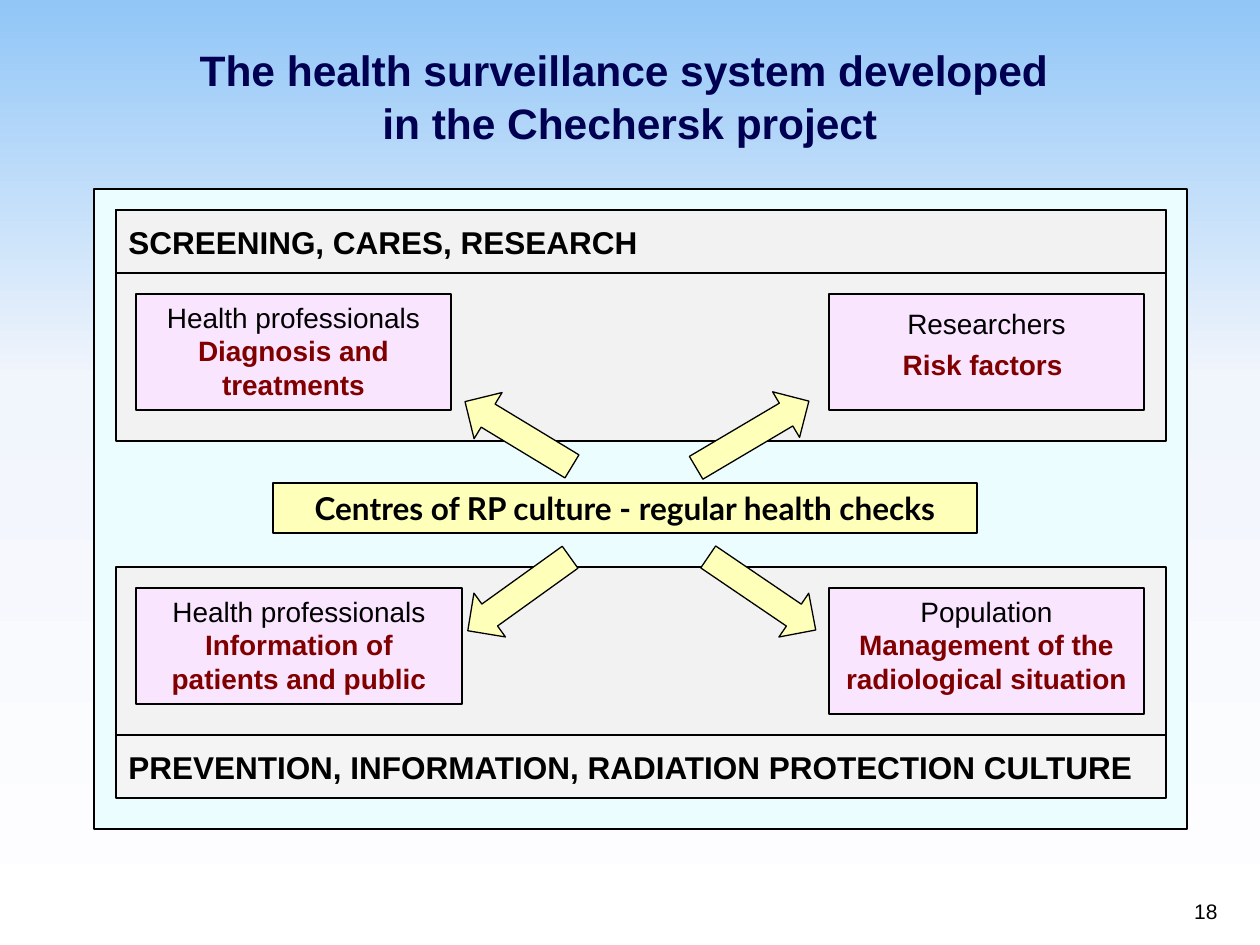
"""Build the slide on the Chechersk health surveillance system."""
from copy import deepcopy
from dataclasses import dataclass

from pptx import Presentation
from pptx.dml.color import RGBColor
from pptx.enum.shapes import MSO_SHAPE
from pptx.enum.text import MSO_ANCHOR, MSO_AUTO_SIZE, PP_ALIGN
from pptx.oxml.ns import qn
from pptx.util import Emu, Pt

RECT, LEFT_ARROW, RIGHT_ARROW = MSO_SHAPE.RECTANGLE, MSO_SHAPE.LEFT_ARROW, MSO_SHAPE.RIGHT_ARROW
TOP, MIDDLE, BOTTOM = MSO_ANCHOR.TOP, MSO_ANCHOR.MIDDLE, MSO_ANCHOR.BOTTOM
LEFT, CENTER, RIGHT = PP_ALIGN.LEFT, PP_ALIGN.CENTER, PP_ALIGN.RIGHT


@dataclass(frozen=True)
class Theme:
    font: str = "Arial"
    hub_font: str = "Lato"
    navy: str = "000053"
    black: str = "000000"
    maroon: str = "800000"
    frame: str = "EBFDFF"
    panel: str = "F2F2F2"
    footer: str = "F4F4F4"
    card: str = "FAE5FF"
    yellow: str = "FEFFB8"
    sky: tuple = ((0, "91C6F7"), (0.4, "F1F5FC"), (1, "FFFFFF"))
    title_size: float = 24.3
    heading_size: int = 18
    card_size: int = 16
    number_size: int = 12
    line_width: float = 0.75


THEME = Theme()
SLIDE = (1260, 945)
TITLE = ("The health surveillance system developed ", "in the Chechersk project")
TITLE_BOX = (0, 31, 1260, 148)
NUMBER, NUMBER_BOX = "18", (968, 867, 262, 63)
FRAME = (94, 189, 1093, 640)
PANEL_LEFT, PANEL_WIDTH, HEADING_HEIGHT = 116, 1050, 63
PANELS = [(567, 221), (210, 231)]
HEADINGS = [
    ("SCREENING, CARES, RESEARCH", 210, THEME.panel),
    ("PREVENTION, INFORMATION, RADIATION PROTECTION CULTURE", 735, THEME.footer),
]
CARDS = [
    ("Health professionals", "Diagnosis and treatments", (136, 294, 315, 116), 1),
    ("Population", "Management of the radiological situation", (829, 588, 315, 126), 1),
    ("Researchers", "Risk factors ", (829, 294, 315, 116), 1.2),
    ("Health professionals", "Information of patients and public", (136, 588, 326, 116), 1),
]
ARROWS = [
    (LEFT_ARROW, (456, 407, 125, 54), 31.2),
    (LEFT_ARROW, (456, 567, 126, 54), 324.3),
    (RIGHT_ARROW, (687, 408, 131, 53), 329.4),
    (RIGHT_ARROW, (697, 567, 130, 53), 34.2),
]
HUB, HUB_BOX = "Centres of RP culture - regular health checks", (273, 483, 704, 50)


def px(value):
    return Emu(round(value * 914400 / 126))


def add_span(para, text, size, color=THEME.black, bold=False, font=THEME.font):
    span = para.add_run()
    span.text = text
    span.font.name, span.font.size, span.font.bold = font, Pt(size), bold
    span.font.color.rgb = RGBColor.from_string(color)


def set_frame(box, anchor):
    frame = box.text_frame
    frame.word_wrap, frame.auto_size = True, MSO_AUTO_SIZE.NONE
    frame.vertical_anchor = anchor
    return frame


def add_block(page, bounds, fill, kind=RECT):
    block = page.shapes.add_shape(kind, *map(px, bounds))
    block.shadow.inherit = False
    block.fill.solid()
    block.fill.fore_color.rgb = RGBColor.from_string(fill)
    block.line.color.rgb = RGBColor.from_string(THEME.black)
    block.line.width = Pt(THEME.line_width)
    return block


def add_line(box, anchor, align, text, size, **style):
    para = set_frame(box, anchor).paragraphs[0]
    para.alignment = align
    add_span(para, text, size, **style)


def paint_background(page):
    fill = page.background.fill
    fill.gradient()
    fill.gradient_angle = 270
    first = next(page.element.iter(qn("a:gs")))
    first.addnext(deepcopy(first))
    for stop, (position, color) in zip(fill.gradient_stops, THEME.sky):
        stop.position = position
        stop.color.rgb = RGBColor.from_string(color)


def add_title(page):
    title = page.shapes.title
    title.left, title.top, title.width, title.height = map(px, TITLE_BOX)
    frame = set_frame(title, MIDDLE)
    frame.margin_left = frame.margin_right = frame.margin_top = 0
    frame.margin_bottom = px(21)
    para = frame.paragraphs[0]
    para.alignment, para.line_spacing = CENTER, 1.04
    for index, text in enumerate(TITLE):
        if index:
            para.add_line_break()
        add_span(para, text, THEME.title_size, THEME.navy, True)


def add_card(page, role, task, bounds, spacing):
    frame = set_frame(add_block(page, bounds, THEME.card), TOP)
    lines = ((role, THEME.black, False), (task, THEME.maroon, True))
    for index, (text, color, bold) in enumerate(lines):
        para = frame.add_paragraph() if index else frame.paragraphs[0]
        para.alignment, para.line_spacing = CENTER, float(spacing)
        add_span(para, text, THEME.card_size, color, bold)


def main():
    deck = Presentation()
    deck.slide_width, deck.slide_height = map(px, SLIDE)
    page = deck.slides.add_slide(deck.slide_layouts[5])
    paint_background(page)
    add_title(page)
    add_block(page, FRAME, THEME.frame)
    for top, height in PANELS:
        add_block(page, (PANEL_LEFT, top, PANEL_WIDTH, height), THEME.panel)
    for card in CARDS:
        add_card(page, *card)
    for kind, bounds, angle in ARROWS:
        add_block(page, bounds, THEME.yellow, kind).rotation = angle
    hub = add_block(page, HUB_BOX, THEME.yellow)
    add_line(hub, TOP, CENTER, HUB, THEME.heading_size, bold=True, font=THEME.hub_font)
    for text, top, fill in HEADINGS:
        heading = add_block(page, (PANEL_LEFT, top, PANEL_WIDTH, HEADING_HEIGHT), fill)
        add_line(heading, MIDDLE, LEFT, text, THEME.heading_size, bold=True)
    number = page.shapes.add_textbox(*map(px, NUMBER_BOX))
    add_line(number, BOTTOM, RIGHT, NUMBER, THEME.number_size)
    deck.save("out.pptx")


if __name__ == "__main__":
    main()
